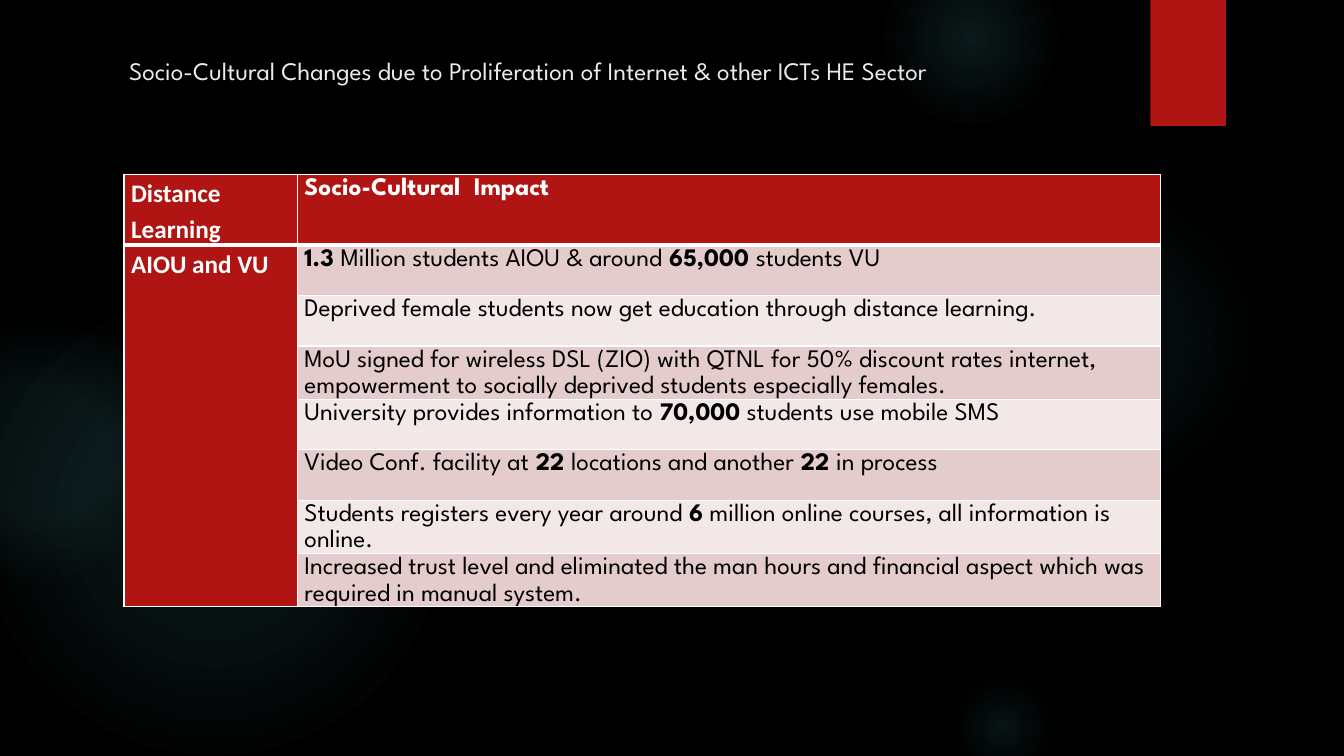
from dataclasses import dataclass

from lxml import etree
from pptx import Presentation
from pptx.dml.color import RGBColor
from pptx.enum.shapes import MSO_SHAPE
from pptx.enum.text import MSO_ANCHOR, PP_ALIGN
from pptx.oxml import parse_xml
from pptx.oxml.ns import qn
from pptx.util import Inches, Pt

ELLIPSE, RECTANGLE = MSO_SHAPE.OVAL, MSO_SHAPE.RECTANGLE
TOP, LEFT = MSO_ANCHOR.TOP, PP_ALIGN.LEFT
DRAWING_NS = "http://schemas.openxmlformats.org/drawingml/2006/main"


@dataclass(frozen=True)
class Theme:
    """Colours, fonts and type size of the slide."""
    background: str = "000000"
    glow: str = "50B9C1"
    accent: str = "B01513"
    title: str = "EBEBEB"
    light: str = "FFFFFF"
    dark: str = "000000"
    bands: tuple = ("E4CCCC", "F2E8E7")
    body_font: str = "League Spartan"
    label_font: str = "Calibri"
    size: int = 18


THEME = Theme()

GLOWS = [
    (-0.17, 2.92, 4.58, ((0, 10), (36, 8), (75, 0))),
    (-0.92, 3.17, 2.58, ((0, 8), (36, 8), (72, 0))),
    (9.41, 1.83, 3.08, ((0, 7), (36, 6), (69, 0))),
    (8.75, -0.5, 1.75, ((0, 14), (36, 7), (73, 0))),
    (9.41, 6.67, 1.08, ((0, 11), (30, 5), (67, 0))),
]
TITLE = "Socio-Cultural Changes due to Proliferation of Internet & other ICTs HE Sector"
HEADERS = ("*Distance Learning", "*Socio-Cultural  Impact")
GROUP = "*AIOU and VU"
IMPACTS = [
    "*1.3 *Million students AIOU & around* 65,000 *students VU",
    "Deprived female students now get education through distance learning.",
    "MoU signed for wireless DSL (ZIO) with QTNL for 50% discount rates internet, "
    "empowerment to socially deprived students especially females.",
    "University provides information to *70,000* students use mobile SMS",
    "Video Conf. facility at* 22 *locations and another* 22 *in process",
    "Students registers every year around *6* million online courses, "
    "all information is online.",
    "Increased trust level and eliminated the man hours and financial aspect "
    "which was required in manual system.",
]


def apply(target, values):
    """Set every attribute named in values on target."""
    for name, value in values.items():
        setattr(target, name, value)


def write(p, text, color, font):
    """Fill a paragraph with runs; asterisks switch bold on and off."""
    for i, part in enumerate(text.split("*")):
        if part:
            r = p.add_run()
            r.text = part
            apply(r.font, {"size": Pt(THEME.size), "name": font, "bold": i % 2 == 1})
            r.font.color.rgb = RGBColor.from_string(color)


def add_plain_shape(s, kind, box):
    """Add a shape with neither line nor shadow."""
    sp = s.shapes.add_shape(kind, *map(Inches, box))
    sp.line.fill.background()
    sp.shadow.inherit = False
    return sp


def add_glow(s, box, stops):
    """Add a circle that fades out from its centre."""
    sp = add_plain_shape(s, ELLIPSE, box)
    stop_xml = "".join(
        f'<a:gs pos="{pos * 1000}"><a:srgbClr val="{THEME.glow}">'
        f'<a:alpha val="{alpha * 1000}"/></a:srgbClr></a:gs>' for pos, alpha in stops)
    gradient = parse_xml(
        f'<a:gradFill xmlns:a="{DRAWING_NS}" rotWithShape="1"><a:gsLst>{stop_xml}</a:gsLst>'
        '<a:path path="circle"><a:fillToRect l="50000" t="50000" r="50000" b="50000"/>'
        '</a:path></a:gradFill>')
    sp._element.spPr.find(qn("a:prstGeom")).addnext(gradient)


def add_backdrop(s):
    """Paint the background, its glows and the red tab."""
    fill = s.background.fill
    fill.solid()
    fill.fore_color.rgb = RGBColor.from_string(THEME.background)
    for left, top, size, stops in GLOWS:
        add_glow(s, (left, top, size, size), stops)
    tab = add_plain_shape(s, RECTANGLE, (11.41, 0, 0.75, 1.25))
    tab.fill.solid()
    tab.fill.fore_color.rgb = RGBColor.from_string(THEME.accent)


def add_title(s, box):
    """Place and format the title placeholder in the box."""
    title = s.shapes.title
    apply(title, dict(zip(("left", "top", "width", "height"), map(Inches, box))))
    tf = title.text_frame
    apply(tf, {"word_wrap": True, "vertical_anchor": TOP})
    p = tf.paragraphs[0]
    p.alignment = LEFT
    write(p, TITLE, THEME.title, THEME.body_font)


def add_borders(cell, bottom):
    """Draw white borders, with the given bottom width in points."""
    tc_pr = cell._tc.get_or_add_tcPr()
    for side, width in (("L", 1), ("R", 1), ("T", 1), ("B", bottom)):
        ln = etree.SubElement(tc_pr, qn(f"a:ln{side}"), w=str(Pt(width)))
        fill = etree.SubElement(ln, qn("a:solidFill"))
        etree.SubElement(fill, qn("a:srgbClr"), val=THEME.light)


def format_cell(cell, text, fill, color, font, bottom=1):
    """Set the text, margins, borders and fill of one cell."""
    apply(cell, {"margin_left": Inches(0.07), "margin_right": Inches(0.07),
                 "margin_top": 0, "margin_bottom": 0, "vertical_anchor": TOP})
    add_borders(cell, bottom)
    cell.fill.solid()
    cell.fill.fore_color.rgb = RGBColor.from_string(fill)
    p = cell.text_frame.paragraphs[0]
    p.line_spacing = 1.15
    write(p, text, color, font)


def add_impact_table(s, box):
    """Build the table of impacts with one merged group label."""
    left, top, width, label_width, header_height, row_height = map(Inches, box)
    count = len(IMPACTS)
    table = s.shapes.add_table(count + 1, 2, left, top, width,
                               header_height + count * row_height).table
    table.columns[0].width = label_width
    table.columns[1].width = width - label_width
    for i, row in enumerate(table.rows):
        row.height = row_height if i else header_height
    fonts = (THEME.label_font, THEME.body_font)
    for col, (text, font) in enumerate(zip(HEADERS, fonts)):
        format_cell(table.cell(0, col), text, THEME.accent, THEME.light, font, 3)
    for i, impact in enumerate(IMPACTS):
        format_cell(table.cell(i + 1, 0), "" if i else GROUP,
                    THEME.accent, THEME.light, THEME.label_font)
        format_cell(table.cell(i + 1, 1), impact,
                    THEME.bands[i % 2], THEME.dark, THEME.body_font)
    table.cell(1, 0).merge(table.cell(count, 0))


def main():
    """Build the slide and save it."""
    prs = Presentation()
    apply(prs, {"slide_width": Inches(13.33), "slide_height": Inches(7.5)})
    s = prs.slides.add_slide(prs.slide_layouts[5])
    add_backdrop(s)
    add_title(s, (1.18, 0.5, 10.04, 0.62))
    add_impact_table(s, (1.23, 1.73, 10.28, 1.72, 0.59, 0.5))
    prs.save("out.pptx")


if __name__ == "__main__":
    main()
